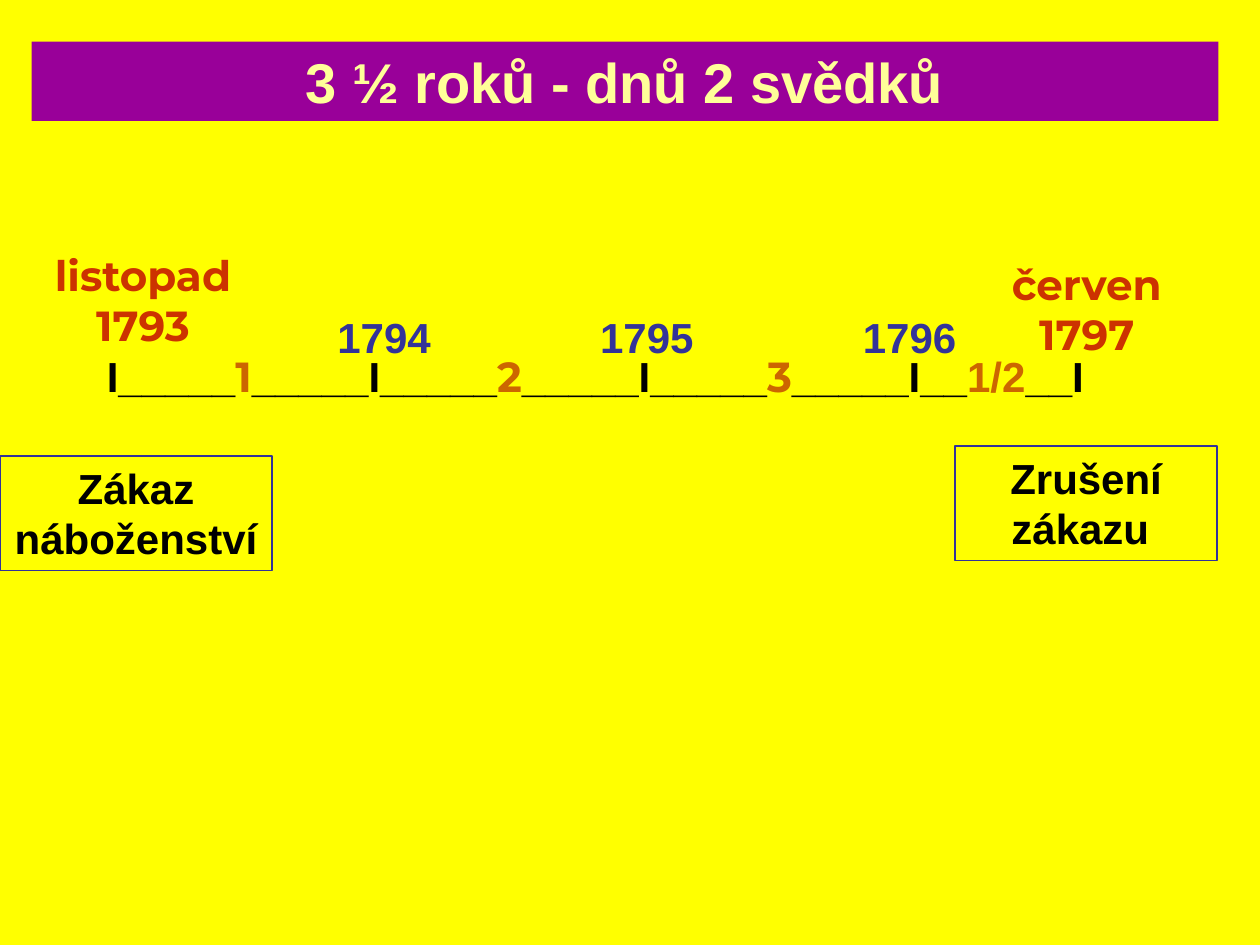
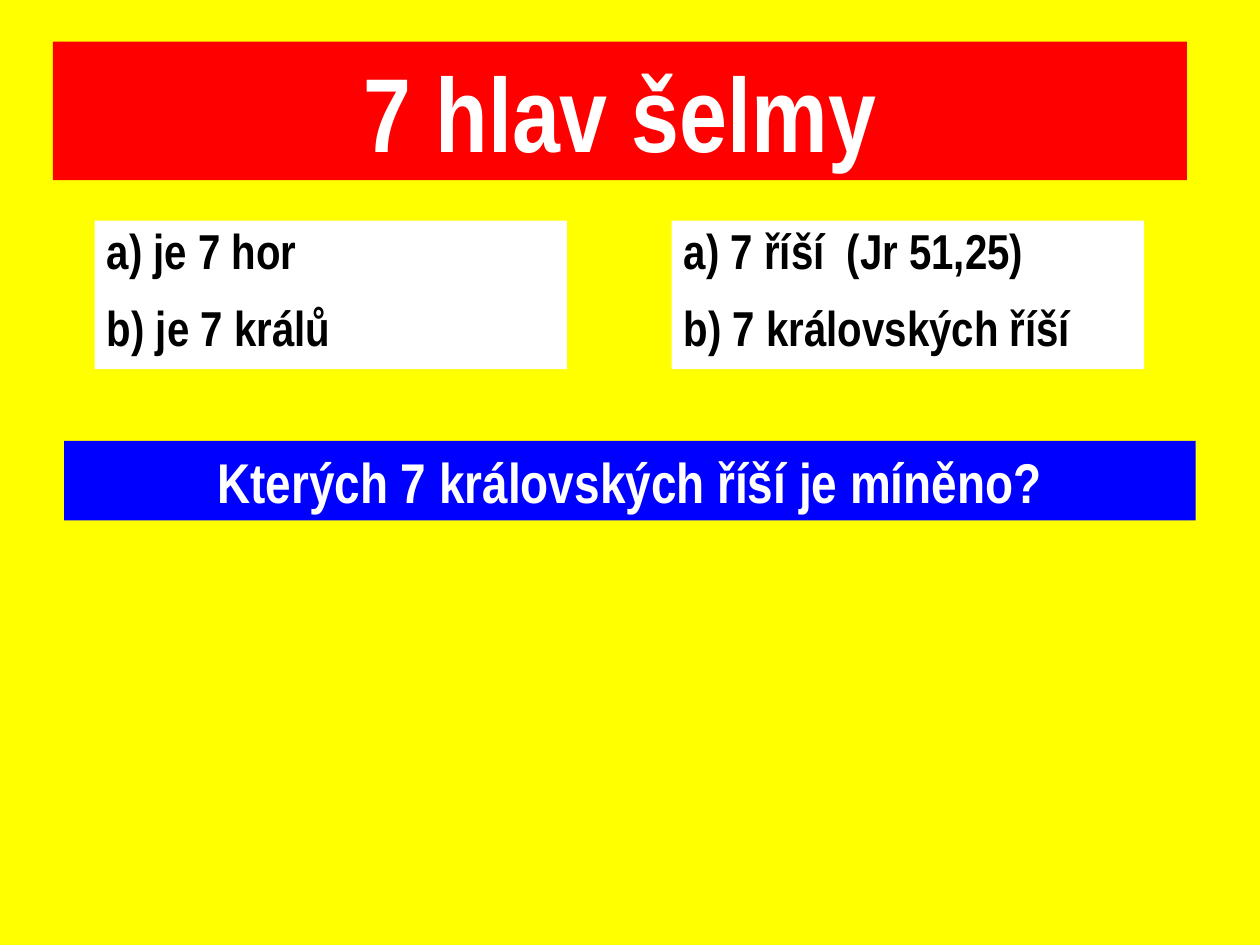
from pptx import Presentation
from pptx.dml.color import RGBColor
from pptx.enum.shapes import MSO_SHAPE
from pptx.enum.text import MSO_ANCHOR, PP_ALIGN
from pptx.util import Inches, Pt

RECTANGLE = MSO_SHAPE.RECTANGLE
LEFT, CENTER = PP_ALIGN.LEFT, PP_ALIGN.CENTER
TOP = MSO_ANCHOR.TOP

COLORS = {
    "background": "FFFF00",
    "purple": "990099",
    "cream": "FFFF99",
    "red": "FF0000",
    "blue": "0000FF",
    "white": "FFFFFF",
    "black": "000000",
    "year": "333399",
    "date": "CC3300",
    "count": "CC6600",
}
ARIAL, NARROW, MONTSERRAT = "Arial", "Arial Narrow", "Montserrat"


def rgb(name):
    return RGBColor.from_string(COLORS[name])


def style_run(run, size, font, color):
    run.font.size = Pt(size)
    run.font.name = font
    run.font.bold = True
    run.font.color.rgb = rgb(color)


def write(shape, lines, size, font, color, align):
    frame = shape.text_frame
    frame.word_wrap = True
    frame.vertical_anchor = TOP
    frame.text = "\n".join(lines)
    for paragraph in frame.paragraphs:
        paragraph.alignment = align
        for run in paragraph.runs:
            style_run(run, size, font, color)
    return frame


def add_label(slide, box, text, font, color, align=LEFT):
    label = slide.shapes.add_textbox(*map(Inches, box))
    write(label, [text], 24, font, color, align)


def add_panel(slide, box, lines, size, font, color, fill=None, outline=None, align=CENTER):
    panel = slide.shapes.add_shape(RECTANGLE, *map(Inches, box))
    panel.shadow.inherit = False
    if fill:
        panel.fill.solid()
        panel.fill.fore_color.rgb = rgb(fill)
    else:
        panel.fill.background()
    if outline:
        panel.line.color.rgb = rgb(outline)
        panel.line.width = Pt(0.75)
    else:
        panel.line.fill.background()
    return write(panel, lines, size, font, color, align)


def add_slide(deck):
    slide = deck.slides.add_slide(deck.slide_layouts[6])
    slide.background.fill.solid()
    slide.background.fill.fore_color.rgb = rgb("background")
    return slide


def add_timeline(slide, left, top):
    """Axis of typed ticks and rules, with a coloured count inside each span."""
    axis = slide.shapes.add_textbox(Inches(left), Inches(top), Inches(8.17), Inches(0.5))
    axis.text_frame.word_wrap = True
    paragraph = axis.text_frame.paragraphs[0]
    spans = [("1", MONTSERRAT, 5), ("2", MONTSERRAT, 5), ("3", MONTSERRAT, 5), ("1/2", ARIAL, 2)]
    lead = "I"
    for count, font, length in spans:
        rule = "_" * length
        for text, face, color in ((lead + rule, ARIAL, "black"), (count, font, "count")):
            run = paragraph.add_run()
            run.text = text
            style_run(run, 24, face, color)
        lead = rule + "I"
    end = paragraph.add_run()
    end.text = lead
    style_run(end, 24, ARIAL, "black")

    for index, year in enumerate(("1794", "1795", "1796")):
        add_label(slide, (left + 1.83 + 2.085 * index, top - 0.31, 1.17, 0.5),
                  year, ARIAL, "year")
    add_label(slide, (left - 0.48, top - 0.8, 1.73, 0.91),
              "listopad 1793", MONTSERRAT, "date", CENTER)
    add_label(slide, (left + 7, top - 0.73, 1.75, 0.91),
              "červen 1797", MONTSERRAT, "date", CENTER)

    events = [((left - 0.75, top + 0.89, 2.16, 0.91), "Zákaz náboženství"),
              ((left + 6.83, top + 0.81, 2.08, 0.91), "Zrušení zákazu ")]
    for box, event in events:
        add_panel(slide, box, [event], 24, ARIAL, "black", outline="year")


def build_witnesses(deck):
    slide = add_slide(deck)
    add_timeline(slide, 0.75, 2.73)
    add_panel(slide, (0.25, 0.33, 9.42, 0.63), ["3 ½ roků - dnů 2 svědků"],
              32, ARIAL, "cream", "purple")


def add_points(slide, box, points):
    frame = add_panel(slide, box, points, 28, NARROW, "black", "white", align=LEFT)
    for index, paragraph in enumerate(frame.paragraphs):
        paragraph.line_spacing = 0.9
        paragraph.space_before = Pt(14 if index else 0)


def build_heads(deck):
    slide = add_slide(deck)
    add_panel(slide, (0.42, 0.33, 9, 1.1), ["7 hlav šelmy"], 60, NARROW, "white", "red")
    columns = [["a) je 7 hor", "b) je 7 králů"],
               ["a) 7 říší  (Jr 51,25)", "b) 7 královských říší"]]
    for index, points in enumerate(columns):
        add_points(slide, (0.75 + 4.58 * index, 1.75, 3.75, 1.18), points)
    add_panel(slide, (0.51, 3.5, 8.98, 0.63), ["Kterých 7 královských říší je míněno?"],
              32, NARROW, "white", "blue")


def main():
    deck = Presentation()
    deck.slide_width, deck.slide_height = Inches(10), Inches(7.5)
    build_witnesses(deck)
    build_heads(deck)
    deck.save("out.pptx")


if __name__ == "__main__":
    main()
